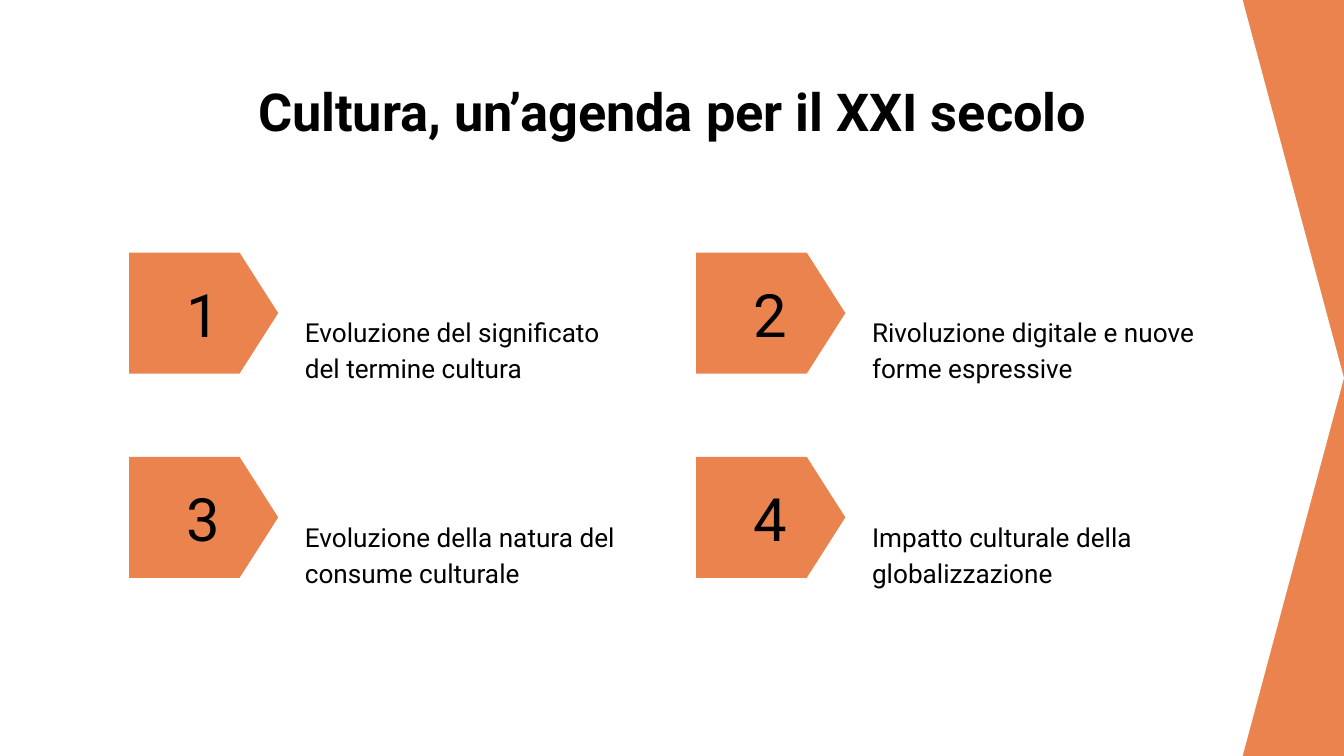
from pptx import Presentation
from pptx.dml.color import RGBColor
from pptx.enum.shapes import MSO_SHAPE as Shape
from pptx.enum.text import MSO_ANCHOR as Anchor, MSO_AUTO_SIZE as AutoSize, PP_ALIGN as Align
from pptx.util import Inches, Pt

ORANGE = RGBColor(0xEB, 0x83, 0x4E)
WHITE = RGBColor(0xFF, 0xFF, 0xFF)
BLACK = RGBColor(0x00, 0x00, 0x00)

WIDTH = 10
HEIGHT = WIDTH * 9 / 16
COLUMNS = 2
LEFT, TOP = 0.96, 1.88
COLUMN_STEP, ROW_STEP = 4.22, 1.52

TITLE = "Cultura, un’agenda per il XXI secolo"
TOPICS = [
    "Evoluzione del significato del termine cultura",
    "Rivoluzione digitale e nuove forme espressive",
    "Evoluzione della natura del consume culturale",
    "Impatto culturale della globalizzazione",
]


def write(box, text, size, align=Align.LEFT, anchor=Anchor.MIDDLE, bold=False, spacing=1.0):
    frame = box.text_frame
    frame.text = text
    frame.word_wrap = True
    frame.auto_size = AutoSize.NONE
    frame.vertical_anchor = anchor
    frame.margin_left = frame.margin_right = Inches(0.1)
    frame.margin_top = frame.margin_bottom = Inches(0.1)
    para = frame.paragraphs[0]
    para.alignment = align
    para.line_spacing = spacing
    para.space_before = Pt(0)
    font = para.runs[0].font
    font.name = "Roboto"
    font.size = Pt(size)
    font.bold = bold
    font.color.rgb = BLACK


def add_pentagon(page, left, top, width, height, point, color):
    pentagon = page.shapes.add_shape(
        Shape.PENTAGON, Inches(left), Inches(top), Inches(width), Inches(height))
    pentagon.adjustments[0] = point
    pentagon.shadow.inherit = False
    pentagon.fill.solid()
    pentagon.fill.fore_color.rgb = color
    pentagon.line.fill.background()
    return pentagon


def add_text(page, left, top, width, height, text, size, **style):
    box = page.shapes.add_textbox(Inches(left), Inches(top), Inches(width), Inches(height))
    write(box, text, size, **style)


def add_background(page):
    page.background.fill.solid()
    page.background.fill.fore_color.rgb = ORANGE
    panel = add_pentagon(page, 0, 0, WIDTH, HEIGHT, 0.134, WHITE)
    page.shapes.title.element.addprevious(panel.element)


def format_title(page):
    title = page.shapes.title
    title.left, title.top = Inches(0.78), Inches(0.49)
    title.width, title.height = Inches(8.44), Inches(0.63)
    write(title, TITLE, 28, align=Align.CENTER, anchor=Anchor.TOP, bold=True)


def add_topic(page, index, topic):
    row, column = divmod(index, COLUMNS)
    left = LEFT + column * COLUMN_STEP
    top = TOP + row * ROW_STEP
    add_pentagon(page, left, top, 1.11, 0.9, 0.319, ORANGE)
    add_text(page, left + 0.24, top + 0.14, 0.63, 0.63, str(index + 1), 32, align=Align.CENTER)
    add_text(page, left + 1.21, top + 0.51, 2.6, 0.4, topic, 14, spacing=1.15)


def main():
    deck = Presentation()
    deck.slide_width, deck.slide_height = Inches(WIDTH), Inches(HEIGHT)
    page = deck.slides.add_slide(deck.slide_layouts[5])
    add_background(page)
    format_title(page)
    for index, topic in enumerate(TOPICS):
        add_topic(page, index, topic)
    deck.save("out.pptx")


if __name__ == "__main__":
    main()
